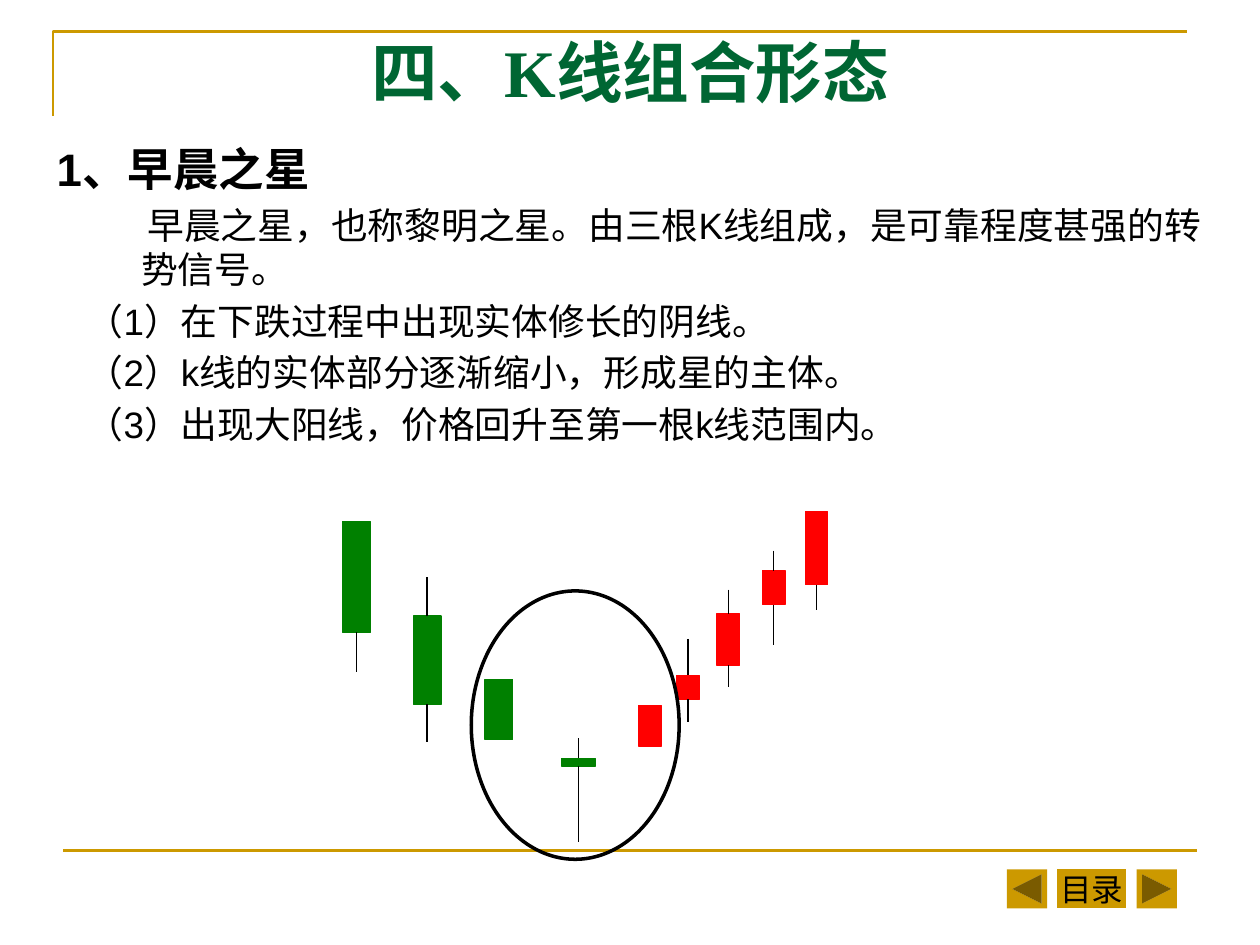
from lxml import etree
from pptx import Presentation
from pptx.dml.color import RGBColor
from pptx.enum.shapes import MSO_CONNECTOR, MSO_SHAPE
from pptx.enum.text import MSO_ANCHOR, MSO_AUTO_SIZE, PP_ALIGN
from pptx.oxml.ns import qn
from pptx.util import Inches, Pt

STRAIGHT = MSO_CONNECTOR.STRAIGHT
RECTANGLE, OVAL = MSO_SHAPE.RECTANGLE, MSO_SHAPE.OVAL
BLANK_BUTTON = MSO_SHAPE.ACTION_BUTTON_CUSTOM
BACK_BUTTON = MSO_SHAPE.ACTION_BUTTON_BACK_OR_PREVIOUS
NEXT_BUTTON = MSO_SHAPE.ACTION_BUTTON_FORWARD_OR_NEXT
MIDDLE, TOP = MSO_ANCHOR.MIDDLE, MSO_ANCHOR.TOP
CENTER, LEFT = PP_ALIGN.CENTER, PP_ALIGN.LEFT
NO_AUTOFIT = MSO_AUTO_SIZE.NONE

GOLD = RGBColor(0xCC, 0x99, 0x00)
TITLE_GREEN = RGBColor(0x00, 0x66, 0x33)
FALL_GREEN = RGBColor(0x00, 0x80, 0x00)
RISE_RED = RGBColor(0xFF, 0x00, 0x00)
BLACK = RGBColor(0x00, 0x00, 0x00)

TITLE_FONT = {"name": "Times New Roman", "size": Pt(38), "bold": True}
HEADING_FONT = {"name": "Arial", "size": Pt(26), "bold": True}
BODY_FONT = {"name": "Arial", "size": Pt(21), "bold": False}
BUTTON_FONT = {"name": "Arial", "size": Pt(18)}

# Text, font and first-line indent in inches
BODY_LINES = [
    ("1、早晨之星", HEADING_FONT, -0.67),
    ("早晨之星，也称黎明之星。由三根K线组成，是可靠程度甚强的转势信号。", BODY_FONT, 0.05),
    ("（1）在下跌过程中出现实体修长的阴线。", BODY_FONT, -0.43),
    ("（2）k线的实体部分逐渐缩小，形成星的主体。", BODY_FONT, -0.43),
    ("（3）出现大阳线，价格回升至第一根k线范围内。", BODY_FONT, -0.43),
]

# Centre, body width, high, body top, body bottom, low: inches from the chart's corner
CANDLES = [
    (0.11, 0.22, 0.08, 0.08, 0.96, 1.27, FALL_GREEN),
    (0.67, 0.22, 0.52, 0.83, 1.53, 1.83, FALL_GREEN),
    (1.24, 0.22, 1.33, 1.33, 1.81, 1.81, FALL_GREEN),
    (1.87, 0.27, 1.80, 1.96, 2.02, 2.62, FALL_GREEN),
    (2.44, 0.18, 1.54, 1.54, 1.86, 1.86, RISE_RED),
    (2.74, 0.18, 1.01, 1.30, 1.49, 1.67, RISE_RED),
    (3.06, 0.18, 0.62, 0.81, 1.22, 1.39, RISE_RED),
    (3.42, 0.18, 0.31, 0.47, 0.74, 1.06, RISE_RED),
    (3.76, 0.18, 0.00, 0.00, 0.58, 0.78, RISE_RED),
]


def format_font(font, values, color):
    for name, value in values.items():
        setattr(font, name, value)
    font.color.rgb = color


def place(shape, box):
    for name, value in zip(("left", "top", "width", "height"), box):
        setattr(shape, name, Inches(value))


def add_line(shapes, start, end, color, width):
    line = shapes.add_connector(STRAIGHT, *(Inches(value) for value in start + end))
    line.line.color.rgb = color
    line.line.width = Pt(width)
    etree.SubElement(line._element.spPr, qn("a:effectLst"))


def add_filled(shapes, kind, box, color, outlined=False):
    shape = shapes.add_shape(kind, *(Inches(value) for value in box))
    shape.shadow.inherit = False
    shape.fill.solid()
    shape.fill.fore_color.rgb = color
    if outlined:
        shape.line.color.rgb = color
        shape.line.width = Pt(0.75)
    else:
        shape.line.fill.background()
    return shape


def add_frame(slide, box):
    left, top, width, height = box
    # Corner rule around the title
    builder = slide.shapes.build_freeform(Inches(left), Inches(top + 0.67))
    builder.add_line_segments(
        [(Inches(left), Inches(top)), (Inches(left + width), Inches(top))], close=False)
    corner = builder.convert_to_shape()
    corner.shadow.inherit = False
    corner.fill.background()
    corner.line.color.rgb = GOLD
    corner.line.width = Pt(1.5)
    # Footer rule, shifted slightly right
    bottom = top + height
    add_line(slide.shapes, (left + 0.08, bottom), (left + 0.08 + width, bottom), GOLD, 1.5)


def add_navigation(slide, box):
    left, top, width, height = box
    side = 0.32
    add_filled(slide.shapes, BACK_BUTTON, (left, top, side, height), GOLD)
    add_filled(slide.shapes, NEXT_BUTTON, (left + width - side, top, side, height), GOLD)
    contents = add_filled(slide.shapes, BLANK_BUTTON, (left + 0.4, top, 0.55, height), GOLD)
    frame = contents.text_frame
    frame.word_wrap = False
    frame.vertical_anchor = MIDDLE
    paragraph = frame.paragraphs[0]
    paragraph.text = "目录"
    paragraph.alignment = CENTER
    format_font(paragraph.runs[0].font, BUTTON_FONT, BLACK)


def fill_title(slide, box):
    title = slide.shapes.title
    place(title, box)
    frame = title.text_frame
    frame.text = "四、K线组合形态"
    frame.auto_size = NO_AUTOFIT
    frame.vertical_anchor = MIDDLE
    frame.paragraphs[0].alignment = CENTER
    format_font(frame.paragraphs[0].runs[0].font, TITLE_FONT, TITLE_GREEN)


def fill_body(slide, box):
    body = slide.placeholders[1]
    place(body, box)
    frame = body.text_frame
    frame.text = "\n".join(text for text, _, _ in BODY_LINES)
    frame.auto_size = NO_AUTOFIT
    frame.vertical_anchor = TOP
    for paragraph, (_, font, indent) in zip(frame.paragraphs, BODY_LINES):
        paragraph.alignment = LEFT
        paragraph.space_before = Pt(font["size"].pt * 0.2)
        properties = paragraph._p.get_or_add_pPr()
        properties.set("marL", str(Inches(0.67)))
        properties.set("indent", str(Inches(indent)))
        etree.SubElement(properties, qn("a:buNone"))
        format_font(paragraph.runs[0].font, font, BLACK)


def add_candles(slide, box):
    left, top = box[:2]
    shapes = slide.shapes.add_group_shape().shapes
    for center, width, high, body_top, body_bottom, low, color in CANDLES:
        x = left + center
        body = (x - width / 2, top + body_top, width, body_bottom - body_top)
        add_filled(shapes, RECTANGLE, body, color, outlined=True)
        for start, end in ((high, body_top), (body_bottom, low)):
            if end > start:
                add_line(shapes, (x, top + start), (x, top + end), BLACK, 0.75)


def add_highlight(slide, box):
    ring = slide.shapes.add_shape(OVAL, *(Inches(value) for value in box))
    ring.shadow.inherit = False
    ring.fill.background()
    ring.line.color.rgb = BLACK
    ring.line.width = Pt(2)


def main():
    presentation = Presentation()
    presentation.slide_width = Inches(10)
    presentation.slide_height = Inches(7.5)
    slide = presentation.slides.add_slide(presentation.slide_layouts[1])
    add_frame(slide, (0.42, 0.25, 9, 6.5))
    add_navigation(slide, (7.99, 6.9, 1.35, 0.31))
    fill_title(slide, (0.5, 0.3, 9, 0.53))
    fill_body(slide, (0.35, 1.07, 9.37, 5.91))
    add_candles(slide, (2.72, 4.06, 3.85, 2.62))
    add_highlight(slide, (3.74, 4.69, 1.65, 2.13))
    presentation.save("out.pptx")


if __name__ == "__main__":
    main()
